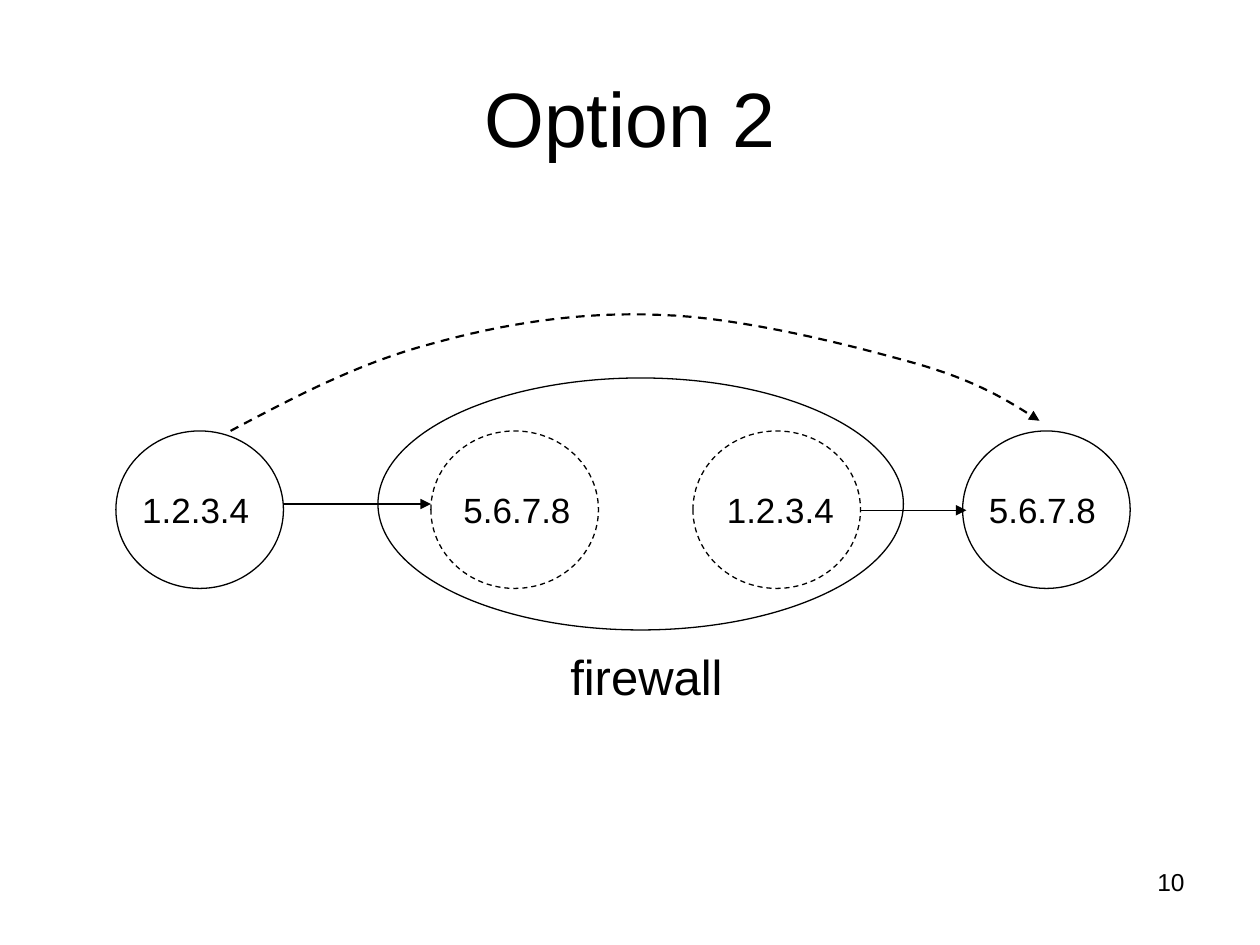
from lxml import etree
from pptx import Presentation
from pptx.dml.color import RGBColor
from pptx.enum.dml import MSO_LINE
from pptx.enum.shapes import MSO_CONNECTOR, MSO_SHAPE
from pptx.enum.text import MSO_ANCHOR, PP_ALIGN
from pptx.oxml.ns import qn
from pptx.util import Inches, Pt

DASH = MSO_LINE.DASH
OVAL = MSO_SHAPE.OVAL
STRAIGHT = MSO_CONNECTOR.STRAIGHT
LEFT, MID, RIGHT = PP_ALIGN.LEFT, PP_ALIGN.CENTER, PP_ALIGN.RIGHT
TOP, MIDDLE = MSO_ANCHOR.TOP, MSO_ANCHOR.MIDDLE

COLOURS = {"ink": "000000", "paper": "FFFFFF"}
INK = RGBColor.from_string(COLOURS["ink"])
STEPS = 16  # straight pieces per curve segment


def add_text(slide, box, words, size, align=LEFT, anchor=TOP):
    frame = slide.shapes.add_textbox(*map(Inches, box)).text_frame
    for name, value in {"word_wrap": True, "vertical_anchor": anchor}.items():
        setattr(frame, name, value)
    para = frame.paragraphs[0]
    para.alignment = align
    run = para.add_run()
    run.text = words
    for name, value in {"name": "Arial", "size": Pt(size)}.items():
        setattr(run.font, name, value)
    run.font.color.rgb = INK


def set_line(shape, width=0.75, dash=None):
    shape.line.color.rgb = INK
    for name, value in {"width": Pt(width), "dash_style": dash}.items():
        setattr(shape.line, name, value)


def add_head(shape):
    """Put an arrowhead at the end of the line."""
    line = shape.line._get_or_add_ln()
    etree.SubElement(line, qn("a:tailEnd"), type="triangle")


def add_oval(slide, box, dash=None):
    oval = slide.shapes.add_shape(OVAL, *map(Inches, box))
    oval.shadow.inherit = False
    oval.fill.background()
    set_line(oval, dash=dash)


def add_host(slide, box, words, indent, dash=None):
    """Draw a circle with its address, set in from the circle's left."""
    left, top, _, _ = box
    add_oval(slide, box, dash)
    add_text(slide, (left + indent, top + 0.41, 1.5, 0.43), words, 20)


def add_wall(slide, box):
    left, top, width, height = box
    add_oval(slide, box)
    add_text(slide, (left + 0.67, top + height + 0.08, width - 1.25, 0.57),
             "firewall", 28, MID)


def add_arrow(slide, start, end, y):
    ends = map(Inches, (start, y, end, y))
    arrow = slide.shapes.add_connector(STRAIGHT, *ends)
    set_line(arrow)
    add_head(arrow)
    etree.SubElement(arrow.line._get_or_add_ln().getparent(),
                     qn("a:effectLst"))


def bezier(a, b, c, d, t):
    s = 1 - t
    return tuple(s**3 * p + 3 * s * s * t * q + 3 * s * t * t * r + t**3 * e
                 for p, q, r, e in zip(a, b, c, d))


def add_arc(slide, box):
    """Draw the dashed path over the firewall, as curves within the box."""
    left, top, _, _ = box
    knots = [(left + x, top + y) for x, y in (
        (0, 0.95), (0.51, 0.68), (1.02, 0.41), (1.59, 0.26),
        (2.16, 0.1), (2.78, 0), (3.42, 0.03),
        (4.06, 0.05), (4.92, 0.27), (5.42, 0.41),
        (5.92, 0.55), (6.17, 0.71), (6.42, 0.87))]
    points = [bezier(*knots[i:i + 4], step / STEPS)
              for i in range(0, len(knots) - 1, 3)
              for step in range(1, STEPS + 1)]
    x, y = knots[0]
    path = slide.shapes.build_freeform(Inches(x), Inches(y))
    path.add_line_segments([tuple(map(Inches, p)) for p in points],
                           close=False)
    arc = path.convert_to_shape()
    arc.shadow.inherit = False
    arc.fill.background()
    set_line(arc, 1.25, DASH)
    add_head(arc)


def add_flow(slide, box):
    """Draw the hosts, the firewall and the arrows between them."""
    left, top, _, _ = box
    add_wall(slide, (left + 2.08, top + 0.53, 4.17, 2))
    for x, words, indent, dash in (
            (0, "1.2.3.4", 0.11, None), (2.5, "5.6.7.8", 0.16, DASH),
            (4.58, "1.2.3.4", 0.17, DASH), (6.72, "5.6.7.8", 0.11, None)):
        add_host(slide, (left + x, top + 0.95, 1.33, 1.25),
                 words, indent, dash)
    add_arc(slide, (left + 0.91, top, 6.42, 0.95))
    add_arrow(slide, left + 1.33, left + 2.5, top + 1.53)
    add_arrow(slide, left + 5.91, left + 6.75, top + 1.58)


def main():
    deck = Presentation()
    deck.slide_width, deck.slide_height = Inches(10), Inches(7.5)
    slide = deck.slides.add_slide(deck.slide_layouts[6])
    fill = slide.background.fill
    fill.solid()
    fill.fore_color.rgb = RGBColor.from_string(COLOURS["paper"])
    add_text(slide, (0.5, 0.3, 9, 1.25), "Option 2", 44, MID, MIDDLE)
    add_flow(slide, (0.92, 2.47, 8.05, 3.18))
    add_text(slide, (7.17, 6.83, 2.33, 0.52), "10", 14, RIGHT)
    deck.save("out.pptx")


if __name__ == "__main__":
    main()
